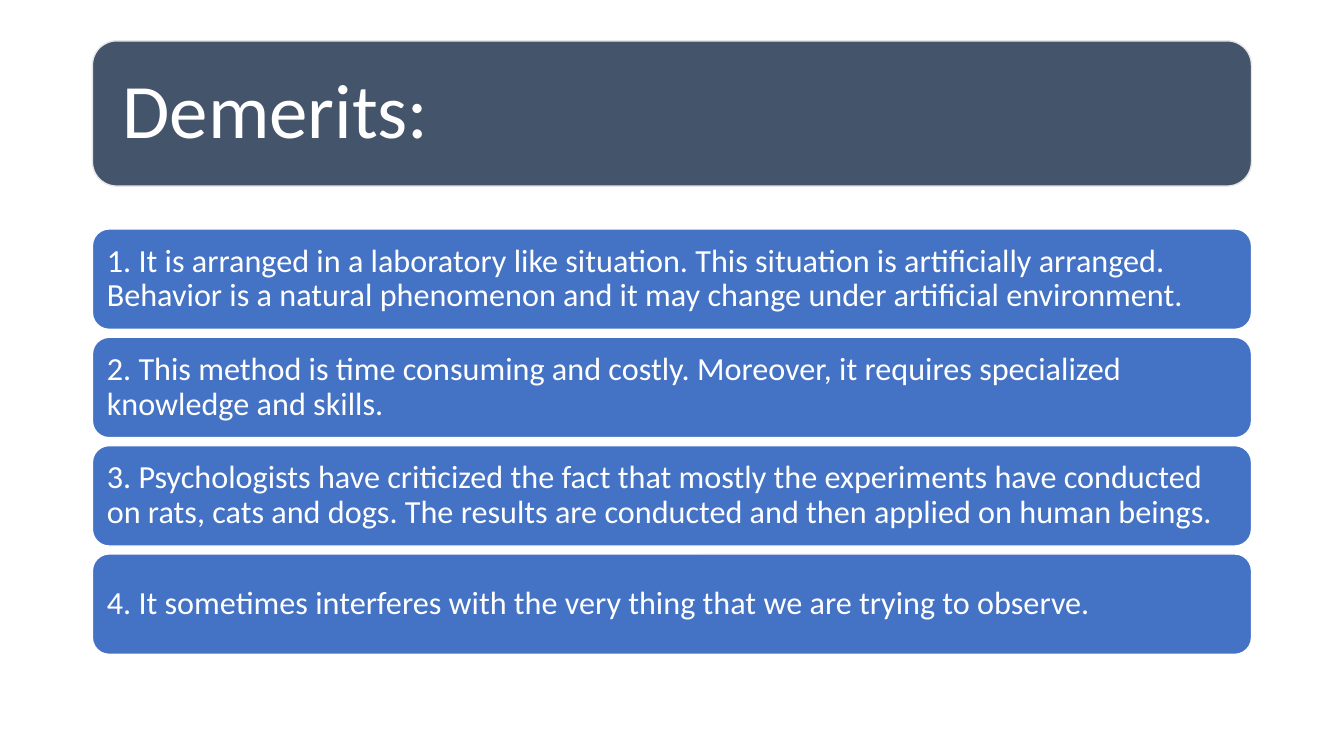
from pptx import Presentation
from pptx.dml.color import RGBColor
from pptx.enum.shapes import MSO_SHAPE as Shape
from pptx.enum.text import MSO_ANCHOR as Anchor, PP_ALIGN as Align
from pptx.util import Cm, Pt

LEFT, WIDTH = 2.33, 29.21
DEMERITS = [
    "1. It is arranged in a laboratory like situation. This situation is artificially arranged. "
    "Behavior is a natural phenomenon and it may change under artificial environment.",
    "2. This method is time consuming and costly. Moreover, it requires specialized "
    "knowledge and skills.",
    "3. Psychologists have criticized the fact that mostly the experiments have conducted "
    "on rats, cats and dogs. The results are conducted and then applied on human beings.",
    "4. It sometimes interferes with the very thing that we are trying to observe.",
]


def color(hex_code):
    return RGBColor.from_string(hex_code)


def add_panel(slide, box, text, size, inset, fill, outline):
    panel = slide.shapes.add_shape(Shape.ROUNDED_RECTANGLE, *(Cm(v) for v in box))
    panel.shadow.inherit = False
    panel.fill.solid()
    panel.fill.fore_color.rgb = color(fill)
    panel.line.color.rgb = color(outline)
    panel.line.width = Pt(1)
    frame = panel.text_frame
    frame.word_wrap = True
    frame.vertical_anchor = Anchor.MIDDLE
    frame.margin_left = frame.margin_right = Cm(inset)
    frame.margin_top = frame.margin_bottom = Cm(inset)
    paragraph = frame.paragraphs[0]
    paragraph.alignment = Align.LEFT
    paragraph.line_spacing = 0.9
    run = paragraph.add_run()
    run.text = text
    run.font.name = "Calibri"
    run.font.size = Pt(size)
    run.font.color.rgb = color("FFFFFF")


def add_title(slide, box):
    add_panel(slide, box, "Demerits:", 55, 0.58, "44546A", "E7E6E6")


def add_demerits(slide, box, gap=0.2):
    left, top, width, height = box
    row_height = (height - gap * (len(DEMERITS) - 1)) / len(DEMERITS)
    for index, demerit in enumerate(DEMERITS):
        row = (left, top + index * (row_height + gap), width, row_height)
        add_panel(slide, row, demerit, 23, 0.24, "4472C4", "FFFFFF")


def main():
    deck = Presentation()
    deck.slide_width, deck.slide_height = Cm(33.87), Cm(19.05)
    slide = deck.slides.add_slide(deck.slide_layouts[6])
    add_title(slide, (LEFT, 1.03, WIDTH, 3.66))
    add_demerits(slide, (LEFT, 5.77, WIDTH, 10.72))
    deck.save("out.pptx")


if __name__ == "__main__":
    main()
